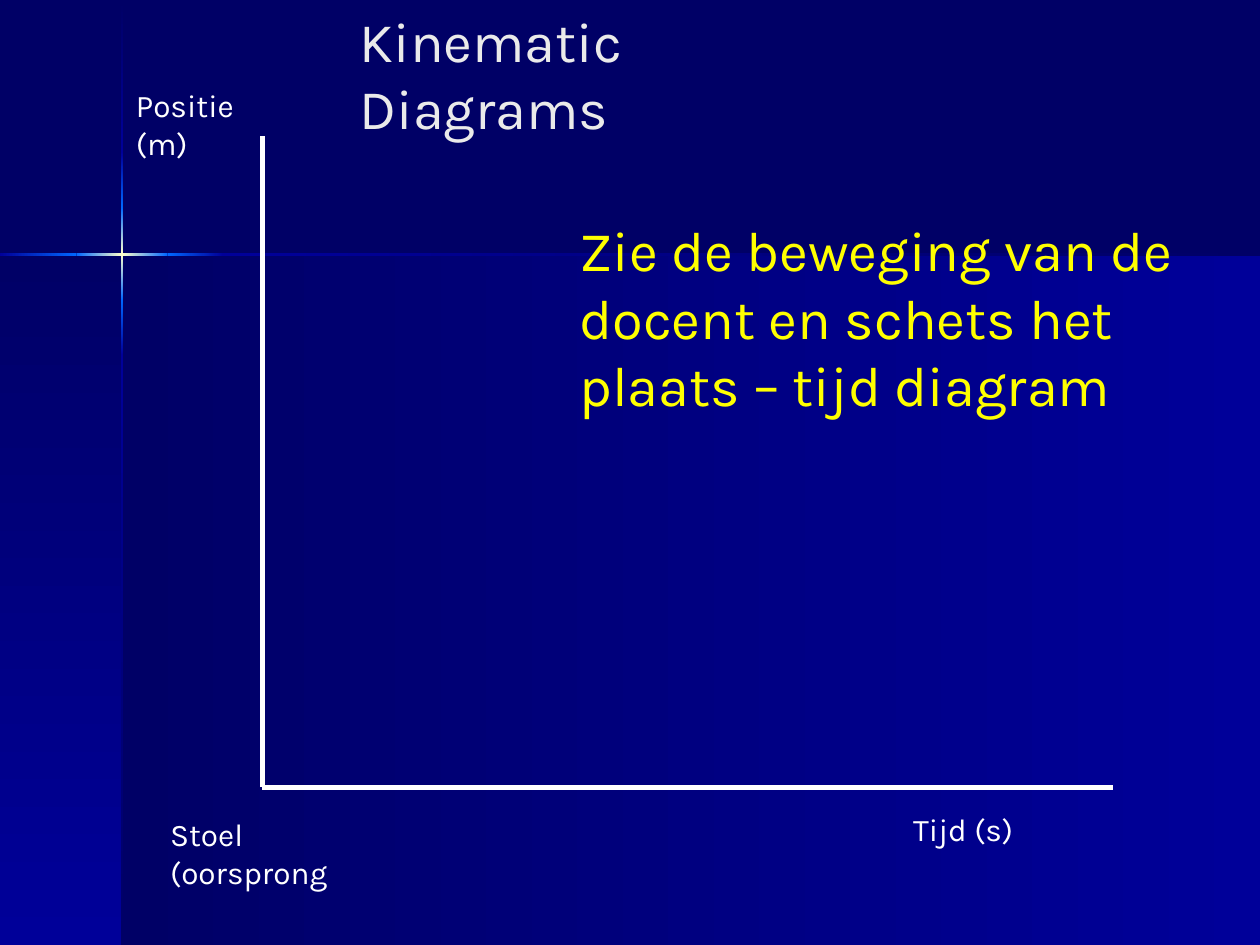
from copy import deepcopy
from itertools import pairwise

from pptx import Presentation
from pptx.dml.color import RGBColor
from pptx.enum import shapes, text
from pptx.oxml.xmlchemy import OxmlElement
from pptx.util import Cm, Pt

NAVY = RGBColor(0x00, 0x00, 0x66)
BLUE = RGBColor(0x00, 0x00, 0x99)
BRIGHT = RGBColor(0x00, 0x66, 0xFF)
GLOW = RGBColor(0xFF, 0xFF, 0xCC)
WHITE = RGBColor(0xFF, 0xFF, 0xFF)
PALE = RGBColor(0xEA, 0xEA, 0xEA)
YELLOW = RGBColor(0xFF, 0xFF, 0x00)
FONT = "Karla"
WIDTH, HEIGHT = 25.4, 19.05
RAY = 0.05  # thickness of the star's rays


def add_gradient(slide, box, colors, down=False):
    """Add a borderless rectangle shaded left to right, or downwards."""
    sp = slide.shapes.add_shape(shapes.MSO_SHAPE.RECTANGLE, *map(Cm, box))
    sp.shadow.inherit = False
    sp.line.fill.background()
    sp.fill.gradient()
    sp.fill.gradient_angle = 270 if down else 0
    stops = sp._element.xpath(".//a:gsLst")[0]
    for _ in colors[2:]:
        stops.insert(1, deepcopy(stops[0]))
    for i, (stop, color) in enumerate(zip(sp.fill.gradient_stops, colors)):
        stop.position = i / (len(colors) - 1)
        stop.color.rgb = color


def add_backdrop(slide, x, y):
    """Add two shaded panels and a star whose rays cross at (x, y)."""
    fill = slide.background.fill
    fill.solid()
    fill.fore_color.rgb = NAVY
    add_gradient(slide, (x, y, WIDTH - x, HEIGHT - y), (NAVY, BLUE))
    add_gradient(slide, (0, y, x, HEIGHT - y), (NAVY, BLUE), down=True)

    shades = [(NAVY, BLUE), (BLUE, BRIGHT), (BRIGHT, GLOW, BRIGHT),
              (BRIGHT, BLUE), (BLUE, NAVY)]
    column = [0, y - 2.06, y - 0.94, y + 0.92, y + 2.03, HEIGHT]
    for (top, bottom), colors in zip(pairwise(column), shades):
        add_gradient(slide, (x - RAY / 2, top, RAY, bottom - top), colors, down=True)
    row = [0, x - 0.92, x + 0.92, x + 2.04, WIDTH]
    for (left, right), colors in zip(pairwise(row), shades[1:]):
        add_gradient(slide, (left, y - RAY / 2, right - left, RAY), colors)


def write(sp, words, size, color):
    tf = sp.text_frame
    tf.word_wrap = True
    tf.auto_size = text.MSO_AUTO_SIZE.NONE
    tf.vertical_anchor = text.MSO_ANCHOR.TOP
    p = tf.paragraphs[0]
    p.alignment = text.PP_ALIGN.LEFT
    r = p.add_run()
    r.text = words
    r.font.name = FONT
    r.font.size = Pt(size)
    r.font.color.rgb = color


def add_text(slide, box, words, size=18, color=WHITE):
    write(slide.shapes.add_textbox(*map(Cm, box)), words, size, color)


def add_axis(slide, start, end):
    axis = slide.shapes.add_connector(
        shapes.MSO_CONNECTOR.STRAIGHT, *map(Cm, start + end))
    axis.line.color.rgb = WHITE
    axis.line.width = Pt(3)
    axis._element.spPr.append(OxmlElement("a:effectLst"))


def add_diagram(slide, left, top, width, height):
    """Add empty position-time axes with their labels."""
    right, bottom = left + width, top + height
    add_axis(slide, (left, top), (left, bottom))
    add_axis(slide, (left, bottom), (right, bottom))
    add_text(slide, (left - 2.8, top - 1.14, 3.56, 1.02), "Positie (m)")
    add_text(slide, (right - 4.27, bottom + 0.33, 2.54, 1.02), "Tijd (s)")
    add_text(slide, (left - 2.11, bottom + 0.43, 5.2, 1.02), "Stoel (oorsprong")


def add_title(slide, left, top, width, height):
    title = slide.shapes.title
    title.left, title.top = Cm(left), Cm(top)
    title.width, title.height = Cm(width), Cm(height)
    write(title, "Kinematic Diagrams", 32, PALE)
    slide.shapes._spTree.append(title._element)  # in front of the backdrop


def main():
    prs = Presentation()
    prs.slide_width, prs.slide_height = Cm(WIDTH), Cm(HEIGHT)
    slide = prs.slides.add_slide(prs.slide_layouts.get_by_name("Title Only"))
    add_backdrop(slide, 2.46, 5.13)
    add_diagram(slide, 5.29, 2.75, 17.14, 13.12)
    add_title(slide, 6.99, 0, 9.88, 1.6)
    add_text(slide, (11.43, 4.23, 13.13, 4.37),
             "Zie de beweging van de docent en schets het plaats – tijd diagram",
             32, YELLOW)
    prs.save("out.pptx")


if __name__ == "__main__":
    main()
